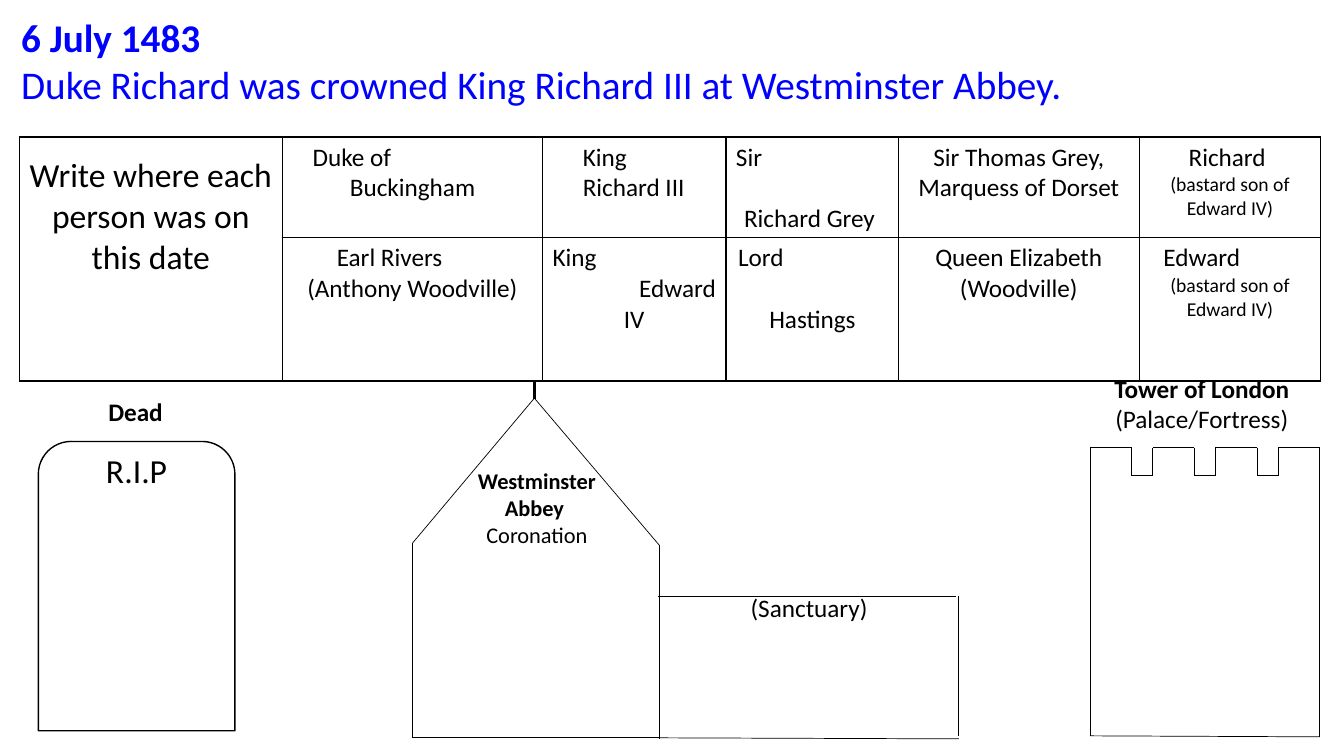
from dataclasses import dataclass
from itertools import pairwise
from typing import Any

from lxml.etree import SubElement
from pptx import Presentation
from pptx.dml.color import RGBColor
from pptx.enum.shapes import MSO_CONNECTOR, MSO_SHAPE
from pptx.enum.text import MSO_ANCHOR, MSO_AUTO_SIZE, PP_ALIGN
from pptx.oxml import parse_xml
from pptx.oxml.ns import nsdecls, qn
from pptx.util import Inches, Pt

BLACK, BLUE, WHITE = "000000", "0000FF", "FFFFFF"
LEFT, MID, RIGHT = PP_ALIGN.LEFT, PP_ALIGN.CENTER, PP_ALIGN.RIGHT
Point = tuple[float, float]


@dataclass
class Line:
    text: str
    size: float = 18
    bold: bool = False
    align: Any = MID
    indent: float = 0
    before: float = 0


@dataclass
class Label:
    left: float
    top: float
    width: float
    height: float
    lines: list[Line]


def paint(target: Any, shade: str) -> None:
    target.rgb = RGBColor.from_string(shade)


def apply(target: Any, form: dict[str, Any]) -> None:
    for name, value in form.items():
        setattr(target, name, value)


def write(frame: Any, lines: list[Line], shade: str = BLACK) -> None:
    frame.word_wrap = True
    for index, line in enumerate(lines):
        para = frame.add_paragraph() if index else frame.paragraphs[0]
        apply(para, {"alignment": line.align, "line_spacing": 1.0,
                     "space_before": Pt(line.before)})
        if line.indent:
            para._p.get_or_add_pPr().set("marL", str(Inches(line.indent)))
        run = para.add_run()
        run.text = line.text
        apply(run.font, {"name": "Calibri", "size": Pt(line.size), "bold": line.bold})
        paint(run.font.color, shade)


def place(shapes: Any, label: Label) -> None:
    box = shapes.add_textbox(Inches(label.left), Inches(label.top),
                             Inches(label.width), Inches(label.height))
    write(box.text_frame, label.lines)


def chain(shapes: Any, points: list[Point], width: float = 0.5) -> None:
    for start, end in pairwise(points):
        edge = shapes.add_connector(MSO_CONNECTOR.STRAIGHT,
                                    *map(Inches, start + end))
        paint(edge.line.color, BLACK)
        edge.line.width = Pt(width)
        SubElement(edge._element.spPr, qn("a:effectLst"))


def grave(shapes: Any) -> None:
    stone = shapes.add_shape(MSO_SHAPE.ROUND_2_SAME_RECTANGLE,
                             *map(Inches, (0.38, 4.38, 1.95, 2.87)))
    stone.shadow.inherit = False
    stone.fill.background()
    paint(stone.line.color, BLACK)
    stone.line.width = Pt(1)


def border(cell: Any) -> None:
    props = cell._tc.get_or_add_tcPr()
    for index, side in enumerate("LRTB"):
        props.insert(index, parse_xml(
            f'<a:ln{side} {nsdecls("a")} w="12700"><a:solidFill>'
            f'<a:srgbClr val="{BLACK}"/></a:solidFill></a:ln{side}>'))


def left(text: str, indent: float = 0, before: float = 0) -> Line:
    return Line(text, align=LEFT, indent=indent, before=before)


SON = Line("(bastard son of Edward IV)", 14)
COLS = [2.61, 2.58, 1.82, 1.71, 2.39, 1.8]
ROWS = [1.0, 1.42]
PEOPLE = [
    [
        [Line("Write where each person was on this date", 24)],
        [left("Duke of", 0.2), left("Buckingham", 0.57)],
        [left("King", 0.3), left("Richard III", 0.3)],
        [left("Sir"), left("Richard Grey", 0.08, 22)],
        [Line("Sir Thomas Grey, Marquess of Dorset")],
        [Line("Richard "), SON],
    ],
    [
        [],
        [left("Earl Rivers", 0.44), Line("(Anthony Woodville)")],
        [left("King"), Line("Edward", align=RIGHT), Line("IV")],
        [left("Lord", 0.02), left("Hastings", 0.33, 22)],
        [Line("Queen Elizabeth (Woodville)")],
        [left("Edward", 0.14), SON],
    ],
]
TITLE = [
    Line("6 July 1483", 28, True, LEFT),
    Line("Duke Richard was crowned King Richard III at Westminster Abbey.",
         28, False, LEFT),
]
ABBEY = Label(4.45, 4.59, 1.75, 0.94,
              [Line("Westminster Abbey ", 16, True), Line("Coronation", 16)])
TOWER = Label(10.76, 3.65, 2.32, 0.71,
              [Line("Tower of London", bold=True), Line("(Palace/Fortress)")])
LABELS = [
    Label(7.34, 5.83, 1.37, 0.4, [Line("(Sanctuary)")]),
    Label(0.38, 3.88, 1.93, 0.4, [Line("Dead", bold=True)]),
    Label(0.39, 4.41, 1.93, 0.5, [Line("R.I.P", 24)]),
]
NAVE = [(6.54, 7.32), (4.09, 7.32), (4.09, 5.39), (5.3, 3.95),
        (6.54, 5.41), (6.54, 7.33)]
SPIRE = [(5.3, 3.96), (5.3, 3.51)]
ANNEX = [
    [(6.53, 7.32), (9.51, 7.33)],
    [(9.51, 7.3), (9.51, 5.91)],
    [(6.53, 5.92), (9.48, 5.92)],
]


def walls() -> list[Point]:
    start, end, top, base, notch, gap = 10.81, 13.09, 4.44, 7.3, 4.72, 0.21
    step = (end - start + gap) / 4
    points = [(start, base), (start, top)]
    for index in range(1, 4):
        far = start + index * step
        near = far - gap
        points += [(near, top), (near, notch), (far, notch), (far, top)]
    return points + [(end, top), (end, base + 0.01), (start, base)]


def roster(shapes: Any) -> None:
    table = shapes.add_table(len(ROWS), len(COLS), Inches(0.19), Inches(1.36),
                             Inches(sum(COLS)), Inches(sum(ROWS))).table
    apply(table, {"first_row": False, "horz_banding": False})
    for column, width in zip(table.columns, COLS):
        column.width = Inches(width)
    for row, height in zip(table.rows, ROWS):
        row.height = Inches(height)
    table.cell(0, 0).merge(table.cell(1, 0))
    for row, people in zip(table.rows, PEOPLE):
        for cell, lines in zip(row.cells, people):
            cell.fill.solid()
            paint(cell.fill.fore_color, WHITE)
            border(cell)
            cell.margin_bottom = Inches(0.03)
            if lines:
                write(cell.text_frame, lines)
    table.cell(0, 0).margin_top = Inches(0.18)


def main() -> None:
    deck = Presentation()
    apply(deck, {"slide_width": Inches(13.33), "slide_height": Inches(7.5)})
    shapes = deck.slides.add_slide(deck.slide_layouts[5]).shapes
    title = shapes.title
    apply(title, {"left": Inches(0.11), "top": Inches(0.08),
                  "width": Inches(12.57), "height": Inches(1.25)})
    apply(title.text_frame, {"vertical_anchor": MSO_ANCHOR.TOP,
                             "auto_size": MSO_AUTO_SIZE.NONE})
    write(title.text_frame, TITLE, BLUE)
    chain(shapes, NAVE)
    chain(shapes, SPIRE, 2.25)
    place(shapes, ABBEY)
    chain(shapes, walls())
    place(shapes, TOWER)
    roster(shapes)
    for side in ANNEX:
        chain(shapes, side)
    grave(shapes)
    for label in LABELS:
        place(shapes, label)
    deck.save("out.pptx")


if __name__ == "__main__":
    main()
